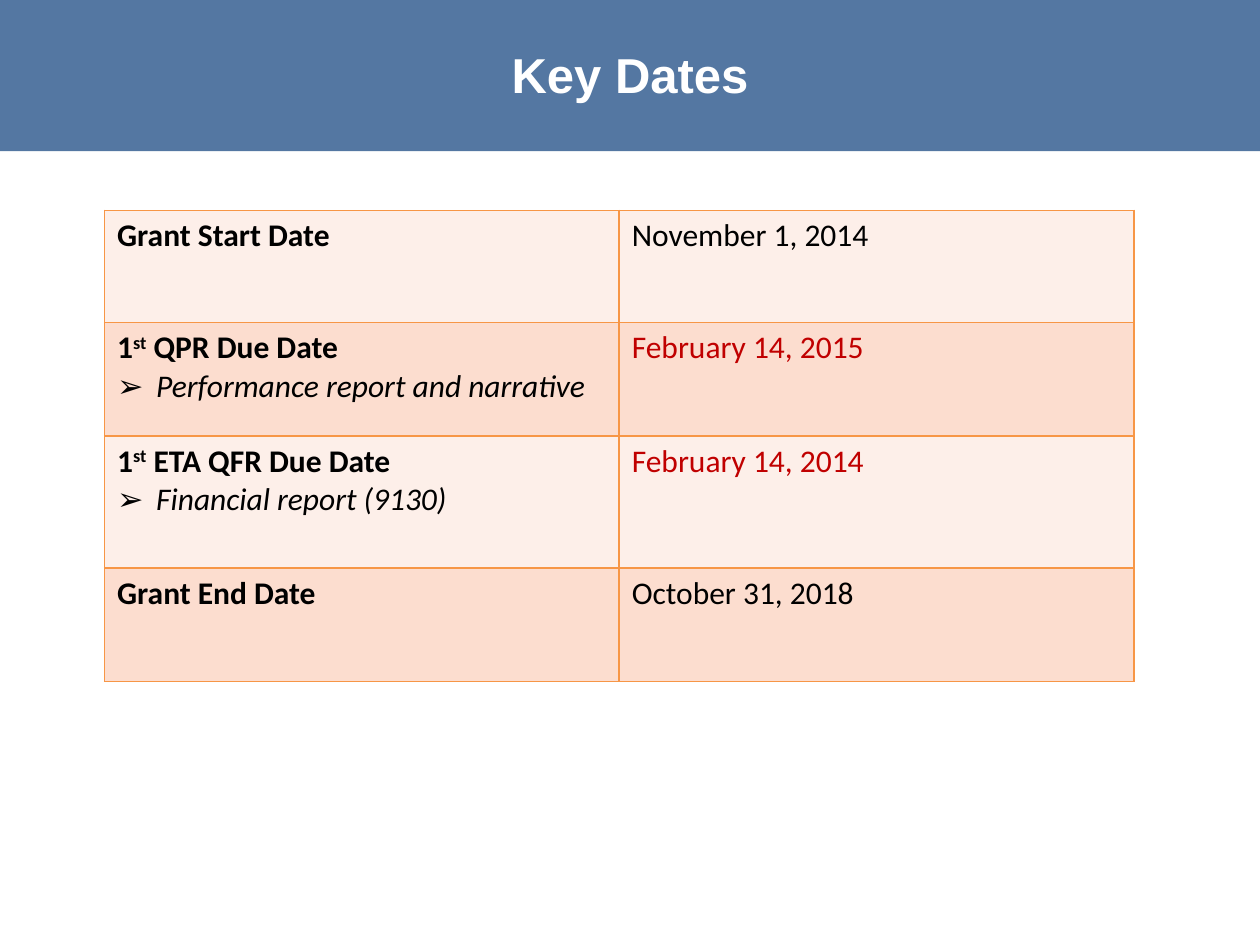
from dataclasses import dataclass

from lxml import etree
from pptx import Presentation
from pptx import util as u
from pptx.dml.color import RGBColor
from pptx.enum import shapes, text
from pptx.oxml import ns

WIDTH, HEIGHT = 10, 7.5
BLACK, RED, WHITE = "000000", "C00000", "FFFFFF"
BAND, BORDER = "376092", "F79646"
ROW_FILLS = ("FDEFE9", "FCDDCF")


@dataclass
class KeyDate:
    label: str
    date: str
    height: float
    ordinal: bool = False
    detail: str = ""
    date_color: str = BLACK


KEY_DATES = [
    KeyDate("Grant Start Date", "November 1, 2014", 0.89),
    KeyDate("QPR Due Date", "February 14, 2015", 0.9, True,
            "Performance report and narrative", RED),
    KeyDate("ETA QFR Due Date", "February 14, 2014", 1.05, True,
            "Financial report (9130)", RED),
    KeyDate("Grant End Date", "October 31, 2018", 0.9),
]


def paint(target, color: str) -> None:
    """Give a fill one solid colour."""
    target.solid()
    target.fore_color.rgb = RGBColor.from_string(color)


def add_child(parent, tag: str, **attributes: str):
    return etree.SubElement(parent, ns.qn(tag), attributes)


def add_span(para, words: str, size: float = 18, face: str = "Calibri",
             color: str = BLACK, bold: bool = False, italic: bool = False):
    span = para.add_run()
    span.text = words
    font = span.font
    font.size, font.name = u.Pt(size), face
    font.bold, font.italic = bold, italic
    paint(font.fill, color)
    return span


def add_borders(cell) -> None:
    properties = cell._tc.get_or_add_tcPr()
    for side in ("a:lnL", "a:lnR", "a:lnT", "a:lnB"):
        line = add_child(properties, side, w=str(u.Pt(1)))
        add_child(add_child(line, "a:solidFill"), "a:srgbClr", val=BORDER)


def add_bullet(para) -> None:
    indent = u.Inches(0.31)
    properties = para._p.get_or_add_pPr()
    properties.set("marL", str(indent))
    properties.set("indent", str(-indent))
    add_child(properties, "a:buFont", typeface="Arial")
    add_child(properties, "a:buChar", char="➢")


def add_header(page) -> None:
    # Translucent band across the top
    band = page.shapes.add_shape(shapes.MSO_SHAPE.RECTANGLE, 0, 0,
                                 u.Inches(WIDTH), u.Inches(1.2))
    band.shadow.inherit = False
    band.line.fill.background()
    paint(band.fill, BAND)
    color = band._element.spPr.find(".//" + ns.qn("a:srgbClr"))
    add_child(color, "a:alpha", val="85000")

    # Title
    box = page.shapes.add_textbox(0, 0, u.Inches(WIDTH), u.Inches(1.17))
    frame = box.text_frame
    frame.word_wrap = True
    frame.vertical_anchor = text.MSO_ANCHOR.MIDDLE
    para = frame.paragraphs[0]
    para.alignment = text.PP_ALIGN.CENTER
    add_span(para, "Key Dates", 28, "Arial", WHITE, bold=True)


def write_label(cell, entry: KeyDate) -> None:
    para = cell.text_frame.paragraphs[0]
    if entry.ordinal:
        add_span(para, "1", bold=True)
        suffix = add_span(para, "st", bold=True)
        suffix._r.get_or_add_rPr().set("baseline", "30000")
        add_span(para, " " + entry.label, bold=True)
    else:
        add_span(para, entry.label, bold=True)
    if entry.detail:
        para = cell.text_frame.add_paragraph()
        add_bullet(para)
        add_span(para, entry.detail, italic=True)


def add_dates_table(page, entries: list[KeyDate]) -> None:
    width = WIDTH - 1.83
    height = sum(entry.height for entry in entries)
    table = page.shapes.add_table(len(entries), 2, u.Inches(0.83), u.Inches(1.67),
                                  u.Inches(width), u.Inches(height)).table
    table.first_row = table.horz_banding = False
    for column in table.columns:
        column.width = u.Inches(width / 2)
    for index, entry in enumerate(entries):
        row = table.rows[index]
        row.height = u.Inches(entry.height)
        for cell in row.cells:
            add_borders(cell)
            paint(cell.fill, ROW_FILLS[index % 2])
        label, date = row.cells
        write_label(label, entry)
        add_span(date.text_frame.paragraphs[0], entry.date, color=entry.date_color)


def main() -> None:
    deck = Presentation()
    deck.slide_width, deck.slide_height = u.Inches(WIDTH), u.Inches(HEIGHT)
    page = deck.slides.add_slide(deck.slide_layouts[6])
    add_header(page)
    add_dates_table(page, KEY_DATES)
    deck.save("out.pptx")


if __name__ == "__main__":
    main()
